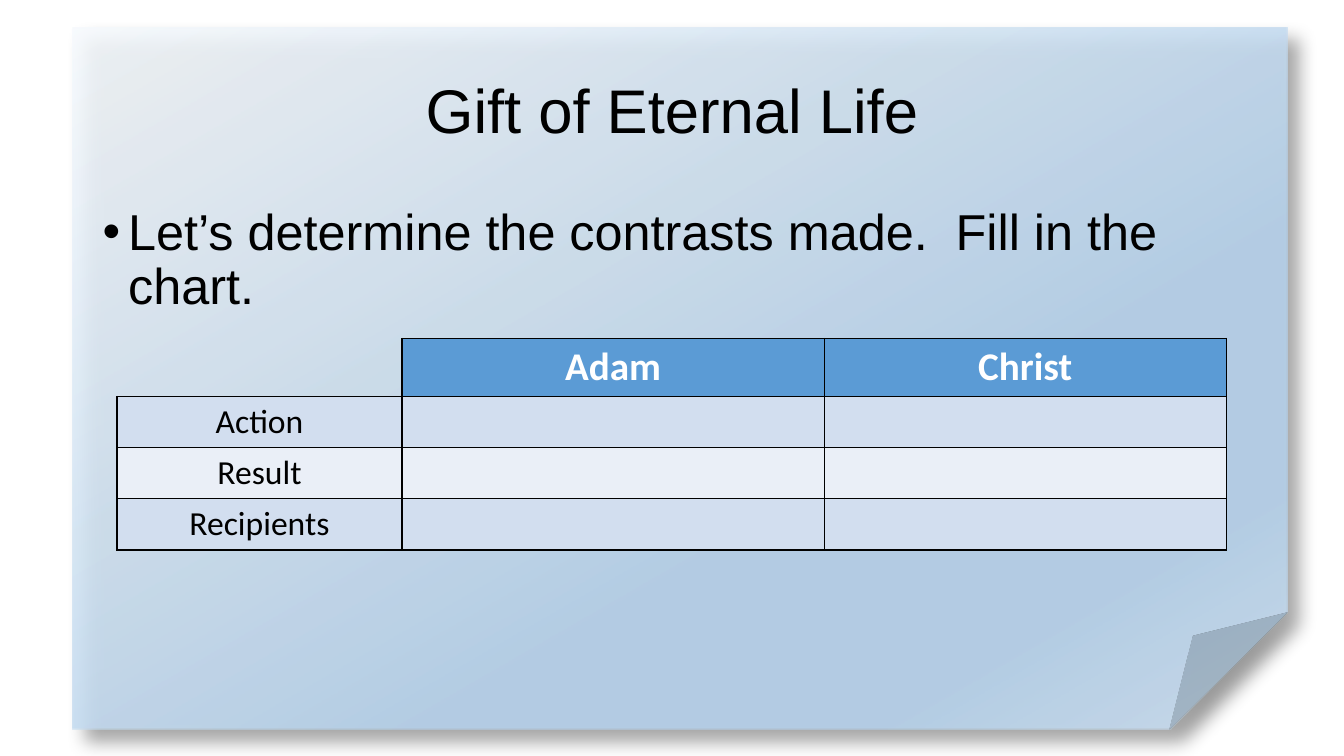
from dataclasses import dataclass

from pptx import Presentation
from pptx.dml.color import RGBColor
from pptx.enum.shapes import MSO_SHAPE as Preset
from pptx.enum.text import MSO_ANCHOR as Anchor, PP_ALIGN as Align
from pptx.oxml import parse_xml
from pptx.oxml.ns import nsdecls
from pptx.util import Cm, Pt

COLORS = {
    "ink": "000000",
    "white": "FFFFFF",
    "header": "5B9BD5",
    "band": "D2DEEF",
    "band_light": "EAEFF7",
    "paper_light": "F7FAFD",
    "paper": "B5D2EC",
    "paper_edge": "CEE1F2",
}
PAPER_STOPS = [(0, "paper_light"), (64, "paper"), (83, "paper"), (100, "paper_edge")]
COLUMN_WIDTHS = [7.18, 10.64, 10.13]


@dataclass
class ContrastRow:
    labels: tuple[str, str, str]
    fill: str
    height: float
    size: int = 24
    color: str = "ink"
    bold: bool = False
    anchor: Anchor = Anchor.MIDDLE


CONTRASTS = [
    ContrastRow(("", "Adam", "Christ"), "header", 1.46, 28, "white", True, Anchor.TOP),
    ContrastRow(("Action", "", ""), "band", 1.29),
    ContrastRow(("Result", "", ""), "band_light", 1.29),
    ContrastRow(("Recipients", "", ""), "band", 1.29),
]


def rgb(name: str) -> RGBColor:
    return RGBColor.from_string(COLORS[name])


def write_text(frame, text: str, *, size: int, font: str = "Arial", color: str = "ink",
               bold: bool = False, align: Align = Align.LEFT, spacing: float = 1.0,
               bullet: str = "") -> None:
    paragraph = frame.paragraphs[0]
    paragraph.alignment = align
    paragraph.line_spacing = spacing
    if bullet:
        properties = paragraph._p.get_or_add_pPr()
        properties.set("marL", str(Cm(0.64)))
        properties.set("indent", str(-Cm(0.64)))
        properties.append(parse_xml(f'<a:buFont {nsdecls("a")} typeface="Arial"/>'))
        properties.append(parse_xml(f'<a:buChar {nsdecls("a")} char="{bullet}"/>'))
    target = paragraph
    if text:
        target = paragraph.add_run()
        target.text = text
    target.font.name = font
    target.font.size = Pt(size)
    target.font.bold = bold
    target.font.color.rgb = rgb(color)


def add_text(slide, top: float, height: float, text: str, anchor: Anchor, **style) -> None:
    frame = slide.shapes.add_textbox(Cm(2.34), Cm(top), Cm(29.21), Cm(height)).text_frame
    frame.word_wrap = True
    frame.vertical_anchor = anchor
    write_text(frame, text, **style)


def add_paper(slide) -> None:
    paper = slide.shapes.add_shape(Preset.FOLDED_CORNER, Cm(1.83), Cm(0.69), Cm(30.61), Cm(17.7))
    paper.line.fill.background()
    paper.fill.background()
    paper.shadow.inherit = False
    stops = "".join(
        f'<a:gs pos="{place * 1000}"><a:srgbClr val="{COLORS[name]}">'
        '<a:alpha val="87000"/></a:srgbClr></a:gs>'
        for place, name in PAPER_STOPS
    )
    properties = paper._element.spPr
    no_fill = properties.find("{*}noFill")
    properties.replace(no_fill, parse_xml(
        f'<a:gradFill {nsdecls("a")} rotWithShape="1"><a:gsLst>{stops}</a:gsLst>'
        '<a:lin ang="3600000" scaled="0"/></a:gradFill>'))
    properties.find("{*}effectLst").append(parse_xml(
        f'<a:outerShdw {nsdecls("a")} blurRad="{Pt(13)}" dist="{Pt(13)}" dir="2700000" '
        f'algn="tl" rotWithShape="0"><a:srgbClr val="{COLORS["ink"]}">'
        '<a:alpha val="40000"/></a:srgbClr></a:outerShdw>'))


def draw_borders(cell, visible: str) -> None:
    properties = cell._tc.get_or_add_tcPr()
    for index, side in enumerate("LRTB"):
        paint = (f'<a:solidFill><a:srgbClr val="{COLORS["ink"]}"/></a:solidFill>'
                 if side in visible else "<a:noFill/>")
        properties.insert(index, parse_xml(
            f'<a:ln{side} {nsdecls("a")} w="{Pt(1)}">{paint}</a:ln{side}>'))


def add_contrast_table(slide) -> None:
    total_height = sum(row.height for row in CONTRASTS)
    table = slide.shapes.add_table(
        len(CONTRASTS), len(COLUMN_WIDTHS), Cm(2.95), Cm(8.53),
        Cm(sum(COLUMN_WIDTHS)), Cm(total_height)).table
    table.first_row = table.horz_banding = False
    for column, width in zip(table.columns, COLUMN_WIDTHS):
        column.width = Cm(width)
    for r, row in enumerate(CONTRASTS):
        table.rows[r].height = Cm(row.height)
        for c, label in enumerate(row.labels):
            cell = table.cell(r, c)
            is_corner = r == c == 0
            draw_borders(cell, "RB" if is_corner else "LRTB")
            if is_corner:
                cell.fill.background()
            else:
                cell.fill.solid()
                cell.fill.fore_color.rgb = rgb(row.fill)
            cell.vertical_anchor = row.anchor
            write_text(cell.text_frame, label, size=row.size, font="Calibri",
                       color=row.color, bold=row.bold, align=Align.CENTER)


def main() -> None:
    deck = Presentation()
    deck.slide_width, deck.slide_height = Cm(33.87), Cm(19.05)
    slide = deck.slides.add_slide(deck.slide_layouts[6])

    # Folded sheet behind the content
    add_paper(slide)

    # Title and task
    add_text(slide, 1.02, 3.68, "Gift of Eternal Life", Anchor.MIDDLE,
             size=44, align=Align.CENTER, spacing=0.9)
    add_text(slide, 5.08, 12.09, "Let’s determine the contrasts made.  Fill in the chart.",
             Anchor.TOP, size=36, spacing=0.9, bullet="•")

    # Chart to fill in
    add_contrast_table(slide)

    deck.save("out.pptx")


if __name__ == "__main__":
    main()
